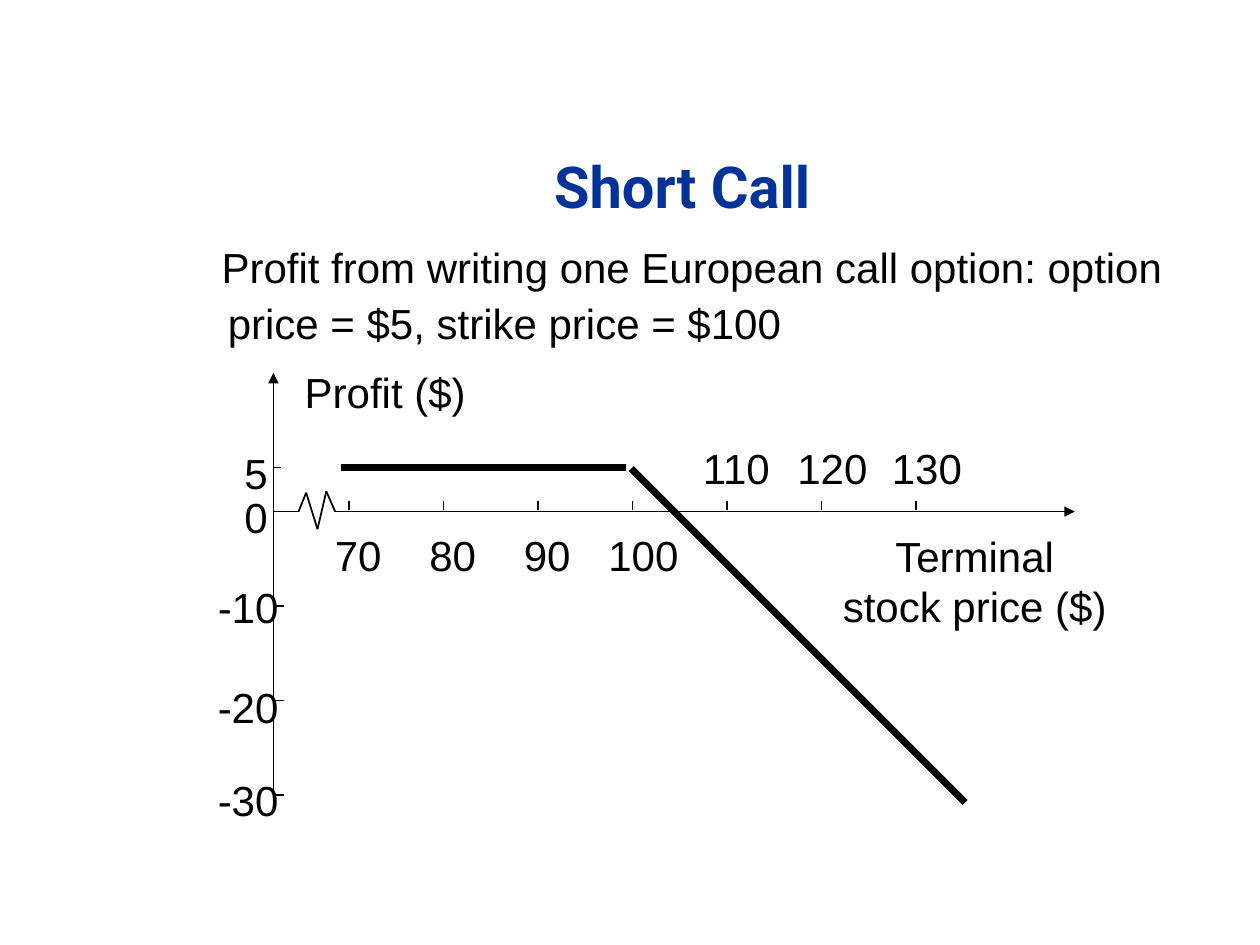
from dataclasses import dataclass

import pptx
import pptx.dml.color
import pptx.enum.shapes
import pptx.enum.text
import pptx.oxml.ns
import pptx.util
from lxml import etree

Inches = pptx.util.Inches
Pt = pptx.util.Pt
RGB = pptx.dml.color.RGBColor
ALIGN = pptx.enum.text.PP_ALIGN
ANCHOR = pptx.enum.text.MSO_ANCHOR


@dataclass(frozen=True)
class Theme:
    ink: str = "000000"
    title: str = "003399"
    title_font: str = "Roboto"
    body_font: str = "Arial"
    title_size: int = 33
    body_size: int = 24
    axis_width: int = 1
    payoff_width: int = 4


THEME = Theme()


def add_text(s, text, box, size=THEME.body_size, font=THEME.body_font,
             color=THEME.ink, bold=False, align=ALIGN.LEFT,
             anchor=ANCHOR.TOP, wrap=False, spacing=None):
    sp = s.shapes.add_textbox(*[Inches(v) for v in box])
    tf = sp.text_frame
    tf.word_wrap = wrap
    tf.vertical_anchor = anchor
    if not wrap:
        tf.auto_size = pptx.enum.text.MSO_AUTO_SIZE.SHAPE_TO_FIT_TEXT
    for i, line in enumerate(text.split("\n")):
        p = tf.paragraphs[0] if i == 0 else tf.add_paragraph()
        p.alignment = align
        if spacing:
            p.line_spacing = spacing
        r = p.add_run()
        r.text = line
        r.font.size = Pt(size)
        r.font.name = font
        r.font.bold = bold
        r.font.color.rgb = RGB.from_string(color)
    return sp


def add_line(s, start, end, width=THEME.axis_width, arrow=False):
    cx = s.shapes.add_connector(
        pptx.enum.shapes.MSO_CONNECTOR.STRAIGHT,
        *[Inches(v) for v in (*start, *end)])
    cx.line.color.rgb = RGB.from_string(THEME.ink)
    cx.line.width = Pt(width)
    qn = pptx.oxml.ns.qn
    if arrow:
        etree.SubElement(cx.line._get_or_add_ln(), qn("a:tailEnd"), type="triangle")
    etree.SubElement(cx._element.spPr, qn("a:effectLst"))
    return cx


def add_title(s, box):
    add_text(s, "Short Call", box, size=THEME.title_size, font=THEME.title_font,
             color=THEME.title, bold=True, align=ALIGN.CENTER,
             anchor=ANCHOR.MIDDLE, wrap=True, spacing=1.05)


def add_description(s, box):
    sp = add_text(s, "Profit from writing one European call option: option "
                  "price = $5, strike price = $100", box, wrap=True, spacing=1.12)
    pPr = sp.text_frame.paragraphs[0]._p.get_or_add_pPr()
    pPr.set("marL", str(Inches(0.38)))
    pPr.set("indent", str(Inches(-0.05)))


def add_payoff_diagram(s, box):
    left, top, width, height = box
    axis_x, axis_y = left + 0.54, top + 1.2
    unit = 0.075
    premium_y = axis_y - 0.35

    def price_x(price):
        return left + 1.14 + unit * (price - 70)

    def profit_y(profit):
        return axis_y - unit * profit

    for profit, y in ((-30, 3.24), (-20, 2.5), (-10, 1.71)):
        add_text(s, str(profit), (left, top + y, 0.68, 0.5))
        tick_y = profit_y(profit)
        add_line(s, (axis_x, tick_y), (axis_x + 0.08, tick_y))
    for label, y in (("0", 0.99), ("5", 0.64)):
        add_text(s, label, (left + 0.21, top + y, 0.38, 0.5))
    add_line(s, (axis_x, premium_y), (axis_x + 0.06, premium_y))

    add_line(s, (axis_x, top + 3.59), (axis_x, top + 0.1), arrow=True)
    add_line(s, (left + 1.03, axis_y), (left + 6.9, axis_y), arrow=True)

    zigzag = [(0, 0), (0.2, 0), (0.26, -0.15), (0.35, 0.14), (0.42, -0.16), (0.49, 0)]
    points = [(axis_x + dx, axis_y + dy) for dx, dy in zigzag]
    for start, end in zip(points, points[1:]):
        add_line(s, start, end)

    for price in range(70, 140, 10):
        x = price_x(price)
        add_line(s, (x, axis_y - 0.08), (x, axis_y - 0.01))
        label_y = axis_y + 0.09 if price <= 100 else axis_y - 0.6
        offset, label_w = (0.21, 0.57) if price < 100 else (0.29, 0.76)
        add_text(s, str(price), (x - offset, label_y, label_w, 0.5))

    add_text(s, "Profit ($)", (left + 0.69, top, 1.48, 0.5))
    add_text(s, "Terminal\nstock price ($)",
             (left + width - 2.29, top + 1.3, 2.29, 0.9), align=ALIGN.CENTER)

    strike_x = price_x(100)
    add_line(s, (price_x(70) - 0.06, premium_y), (strike_x - 0.05, premium_y),
             width=THEME.payoff_width)
    add_line(s, (strike_x - 0.01, premium_y + 0.01),
             (strike_x + 2.64, premium_y + 2.66), width=THEME.payoff_width)


def main():
    prs = pptx.Presentation()
    prs.slide_width, prs.slide_height = Inches(10), Inches(7.5)
    s = prs.slides.add_slide(prs.slide_layouts[6])
    add_title(s, (1.5, 0.92, 7.83, 1.08))
    add_description(s, (1.33, 1.82, 8.42, 4.5))
    add_payoff_diagram(s, (1.63, 2.86, 7.25, 3.74))
    prs.save("out.pptx")


if __name__ == "__main__":
    main()
